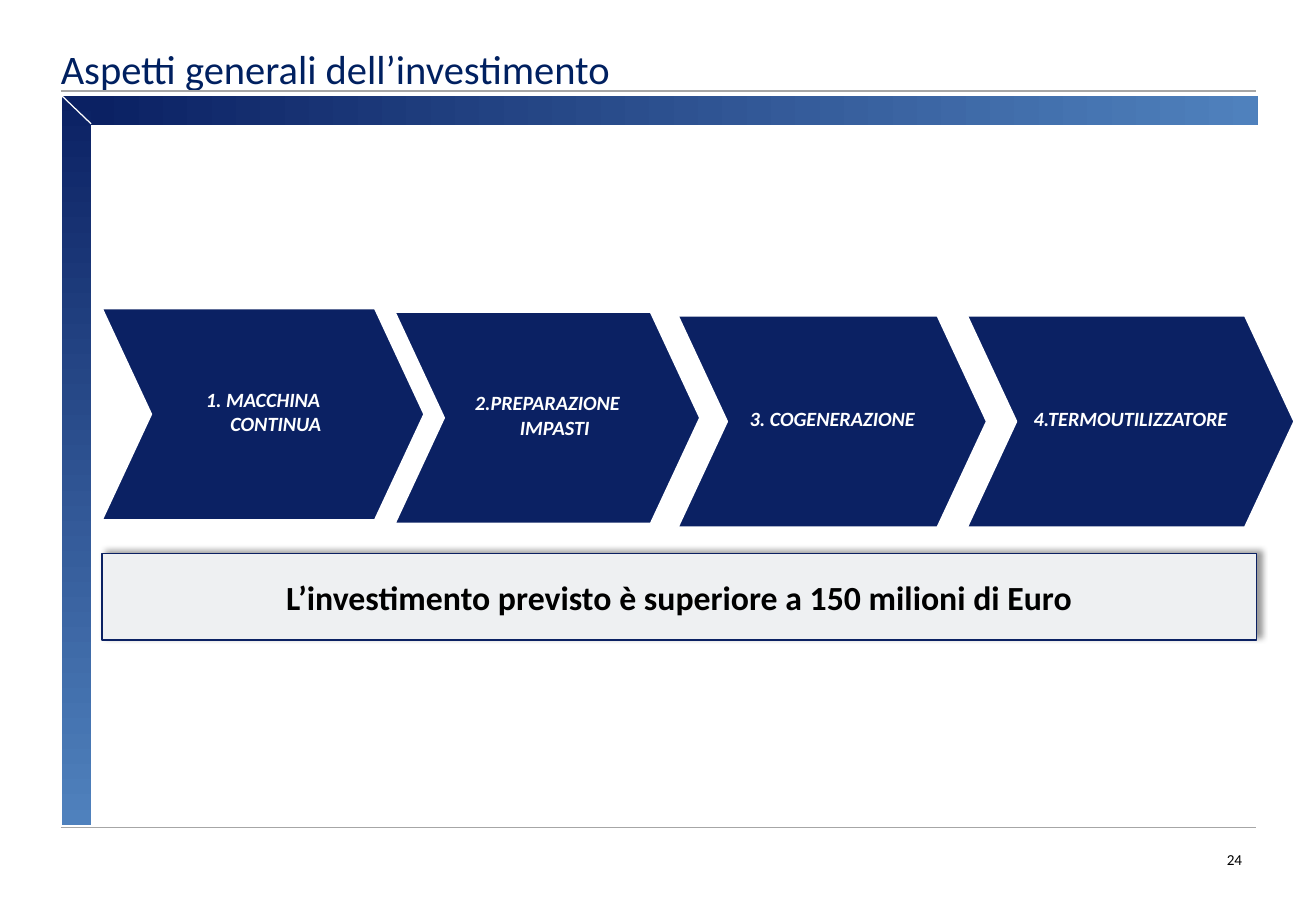
from dataclasses import dataclass

from lxml.etree import SubElement
from pptx import Presentation
from pptx.dml.color import RGBColor
from pptx.enum.shapes import MSO_CONNECTOR, MSO_SHAPE
from pptx.enum.text import MSO_ANCHOR, MSO_AUTO_SIZE, PP_ALIGN
from pptx.oxml.ns import qn
from pptx.util import Inches, Pt

COLORS = {"navy": "0B2163", "blue": "4F81BD", "title": "002060", "rule": "A6A6A6",
          "panel": "EEF0F2", "white": "FFFFFF", "black": "000000"}
LEFT, RIGHT = 0.5, 10.34


@dataclass
class Step:
    text: str
    left: float
    top: float
    width: float
    hanging: float = 0.21


@dataclass
class Band:
    left: float
    top: float
    width: float
    height: float
    angle: float


@dataclass
class Rule:
    x1: float
    y1: float
    x2: float
    y2: float
    color: str = "rule"


STEPS = [
    Step("1. MACCHINA CONTINUA", 0.84, 2.54, 2.65),
    Step("2.PREPARAZIONE IMPASTI", 3.25, 2.57, 2.51, 0.12),
    Step("3. COGENERAZIONE", 5.58, 2.6, 2.54),
    Step("4.TERMOUTILIZZATORE", 7.96, 2.6, 2.69),
]
BANDS = [Band(0.74, 0.79, 9.61, 0.24, 0), Band(0.51, 0.79, 0.24, 6, 270)]
RULES = [Rule(LEFT, 6.81, RIGHT, 6.81), Rule(LEFT, 0.75, RIGHT, 0.75)]
CORNER = Rule(0.5, 0.78, 0.75, 1.02, "white")


def rgb(name: str) -> RGBColor:
    return RGBColor.from_string(COLORS[name])


def write(sp, text: str, *, size: float, color: str, bold: bool = False,
          italic: bool = False, align=PP_ALIGN.CENTER, anchor=MSO_ANCHOR.MIDDLE,
          insets: tuple = (0, 0, 0, 0), hanging: float = 0, spacing: float = 1.0):
    tf = sp.text_frame
    tf.word_wrap = True
    tf.auto_size = MSO_AUTO_SIZE.NONE
    tf.vertical_anchor = anchor
    (tf.margin_left, tf.margin_top,
     tf.margin_right, tf.margin_bottom) = map(Inches, insets)
    p = tf.paragraphs[0]
    p.alignment, p.line_spacing, p.space_before = align, spacing, Pt(0)
    if hanging:
        pPr = p._p.get_or_add_pPr()
        pPr.set("marL", str(Inches(hanging)))
        pPr.set("indent", str(-Inches(hanging)))
    r = p.add_run()
    r.text = text
    r.font.name, r.font.size = "Calibri", Pt(size)
    r.font.bold, r.font.italic = bold, italic
    r.font.color.rgb = rgb(color)


def add_box(s, kind, left: float, top: float, width: float, height: float):
    sp = s.shapes.add_shape(kind, *map(Inches, (left, top, width, height)))
    sp.shadow.inherit = False
    return sp


def paint(sp, fill: str, line: str, weight: float):
    sp.fill.solid()
    sp.fill.fore_color.rgb = rgb(fill)
    sp.line.color.rgb = rgb(line)
    sp.line.width = Pt(weight)


def add_rule(s, rule: Rule):
    ends = map(Inches, (rule.x1, rule.y1, rule.x2, rule.y2))
    line = s.shapes.add_connector(MSO_CONNECTOR.STRAIGHT, *ends)
    line.line.color.rgb = rgb(rule.color)
    line.line.width = Pt(0.75)
    SubElement(line._element.spPr, qn("a:effectLst"))


def add_band(s, band: Band):
    sp = add_box(s, MSO_SHAPE.RECTANGLE, band.left, band.top, band.width, band.height)
    sp.fill.gradient()
    sp.fill.gradient_angle = band.angle
    for stop, name in zip(sp.fill.gradient_stops, ("navy", "blue")):
        stop.color.rgb = rgb(name)
    sp.line.fill.background()


def add_step(s, step: Step):
    sp = add_box(s, MSO_SHAPE.CHEVRON, step.left, step.top, step.width, 1.74)
    sp.adjustments[0] = 0.233
    paint(sp, "navy", "white", 1)
    write(sp, step.text, size=12, color="white", bold=True, italic=True,
          insets=(0.1, 0, 0.1, 0.05), hanging=step.hanging)


def add_shadow(sp):
    effects = sp._element.spPr.find(qn("a:effectLst"))
    shadow = SubElement(effects, qn("a:outerShdw"), blurRad=str(Pt(4)), dist=str(Pt(3)),
                        dir=str(315 * 60000), algn="bl", rotWithShape="0")
    color = SubElement(shadow, qn("a:srgbClr"), val=COLORS["black"])
    SubElement(color, qn("a:alpha"), val="40000")


def main():
    prs = Presentation()
    prs.slide_width, prs.slide_height = Inches(10.83), Inches(7.5)
    s = prs.slides.add_slide(prs.slide_layouts[5])

    # Title
    title = s.shapes.title
    title.left, title.top = Inches(LEFT), Inches(0.27)
    title.width, title.height = Inches(RIGHT - LEFT), Inches(0.48)
    write(title, "Aspetti generali dell’investimento", size=24, color="title",
          align=PP_ALIGN.LEFT, anchor=MSO_ANCHOR.TOP,
          insets=(0, 0.05, 0.1, 0.05), spacing=1.1)

    # Page frame and number
    for rule in RULES:
        add_rule(s, rule)
    number = s.shapes.add_textbox(*map(Inches, (9.98, 7, 0.36, 0.16)))
    write(number, "24", size=9, color="black")

    # Gradient bands with mitred corner
    for band in BANDS:
        add_band(s, band)
    add_rule(s, CORNER)

    # Investment steps
    for step in STEPS:
        add_step(s, step)

    # Total investment
    total = add_box(s, MSO_SHAPE.RECTANGLE, 0.84, 4.56, 9.5, 0.71)
    paint(total, "panel", "navy", 0.75)
    add_shadow(total)
    write(total, "L’investimento previsto è superiore a 150 milioni di Euro",
          size=20, color="black", bold=True, insets=(0.04,) * 4)

    prs.save("out.pptx")


if __name__ == "__main__":
    main()
